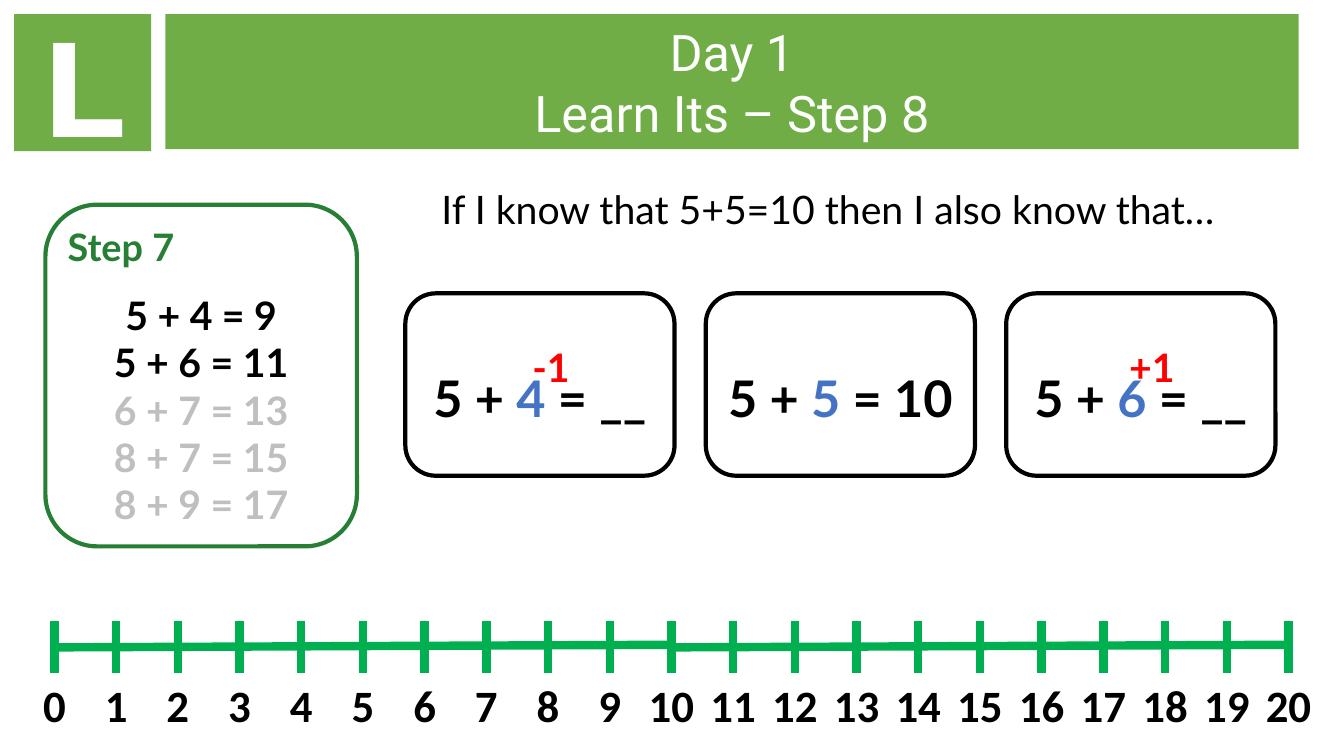
from dataclasses import dataclass

from lxml import etree
from pptx import Presentation
from pptx.dml.color import RGBColor
from pptx.enum.shapes import MSO_CONNECTOR, MSO_SHAPE
from pptx.enum.text import MSO_ANCHOR, PP_ALIGN
from pptx.oxml.ns import qn
from pptx.util import Inches, Pt

RECT, ROUND = MSO_SHAPE.RECTANGLE, MSO_SHAPE.ROUNDED_RECTANGLE
STRAIGHT = MSO_CONNECTOR.STRAIGHT
LEFT, CENTER = PP_ALIGN.LEFT, PP_ALIGN.CENTER
TOP, MIDDLE = MSO_ANCHOR.TOP, MSO_ANCHOR.MIDDLE


@dataclass(frozen=True)
class Theme:
    banner: str = "70AD47"
    step: str = "267F35"
    number_line: str = "00B050"
    white: str = "FFFFFF"
    black: str = "000000"
    faded: str = "BFBFBF"
    changed: str = "4472C4"
    hint: str = "FF0000"
    letter_font: str = "Montserrat"
    title_font: str = "Roboto"
    body_font: str = "Lato"
    label_font: str = "Calibri"
    letter_size: int = 96
    large: int = 36
    label_size: int = 32
    body: int = 28
    step_size: int = 27
    outline: int = 3
    tick: int = 6


T = Theme()


@dataclass(frozen=True)
class Box:
    x: float
    y: float
    w: float
    h: float

    def inner(self, x, y, w, h):
        """Inner box, given as percentages of this one."""
        return Box(self.x + self.w * x / 100, self.y + self.h * y / 100,
                   self.w * w / 100, self.h * h / 100)

    def emu(self):
        return [int(v) for v in (self.x, self.y, self.w, self.h)]


def add_box(s, box, kind, fill, line=None):
    sp = s.shapes.add_shape(kind, *box.emu())
    sp.shadow.inherit = False
    sp.fill.solid()
    sp.fill.fore_color.rgb = RGBColor.from_string(fill)
    if line:
        sp.line.color.rgb = RGBColor.from_string(line)
        sp.line.width = Pt(T.outline)
    else:
        sp.line.fill.background()
    return sp


def add_line(s, x1, y1, x2, y2):
    c = s.shapes.add_connector(STRAIGHT, int(x1), int(y1), int(x2), int(y2))
    c.line.color.rgb = RGBColor.from_string(T.number_line)
    c.line.width = Pt(T.tick)
    etree.SubElement(c.element.spPr, qn("a:effectLst"))


def set_frame(sp, anchor=MIDDLE, side=0.1, top=0.05, bottom=0.05):
    tf = sp.text_frame
    tf.word_wrap = True
    tf.vertical_anchor = anchor
    tf.margin_left = tf.margin_right = Inches(side)
    tf.margin_top, tf.margin_bottom = Inches(top), Inches(bottom)
    return tf


def write(tf, runs, size, font, bold=True, align=CENTER):
    """Add one paragraph of (text, colour) runs."""
    p = tf.paragraphs[0]
    if p.runs:
        p = tf.add_paragraph()
    p.alignment = align
    for text, color in runs:
        r = p.add_run()
        r.text = text
        r.font.size = Pt(size)
        r.font.name = font
        r.font.bold = bold
        r.font.color.rgb = RGBColor.from_string(color)
    return p


def add_text(s, box, text, color, size, font, bold=True, align=CENTER):
    tf = set_frame(s.shapes.add_textbox(*box.emu()), TOP)
    write(tf, [(text, color)], size, font, bold, align)


def letter_tile(s, box):
    tf = set_frame(add_box(s, box, RECT, T.banner), TOP, top=0.07)
    p = write(tf, [("L", T.white)], T.letter_size, T.letter_font)
    p.line_spacing = 0.9


def title_banner(s, box):
    tf = set_frame(add_box(s, box, RECT, T.banner))
    for line in ("Day 1", "Learn Its – Step 8"):
        write(tf, [(line, T.white)], T.large, T.title_font, bold=False)


def step_panel(s, box, heading, known, upcoming):
    tf = set_frame(add_box(s, box, ROUND, T.white, T.step), TOP, 0.07, 0.04, 0.04)
    p = write(tf, [(heading, T.step)], T.step_size, T.body_font, align=LEFT)
    p.space_after = Pt(16)
    for facts, color in ((known, T.black), (upcoming, T.faded)):
        for fact in facts:
            write(tf, [(fact, color)], T.body, T.body_font)


def fact_card(s, box, addend, answer):
    tf = set_frame(add_box(s, box, ROUND, T.white, T.black), MIDDLE, 0.07, 0.29, 0.04)
    runs = [("5 + ", T.black), (addend, T.changed), (f" = {answer}", T.black)]
    write(tf, runs, T.large, T.body_font)


def fact_row(s, box, facts):
    """Cards spread evenly across the box, each with an optional hint."""
    width = 30.94
    pitch = (100 - width) / (len(facts) - 1)
    cards = [box.inner(i * pitch, 0, width, 100) for i in range(len(facts))]
    for card, (addend, answer, hint) in zip(cards, facts):
        fact_card(s, card, addend, answer)
        if hint:
            add_text(s, card.inner(24.72, 24.86, 58.8, 31.49), hint, T.hint,
                     T.body, T.body_font)


def number_line(s, box, last=20):
    """Two gently rising halves that meet at the middle number."""
    half_steps = last // 2
    for x in (0, 50):
        half = box.inner(x, 0, 50, 100)
        overhang = half.w * 0.003
        add_line(s, half.x - overhang, half.y + half.h * 0.51,
                 half.x + half.w + overhang, half.y + half.h * 0.46)
        for i in range(half_steps + 1):
            tick = half.x + half.w * i / half_steps
            add_line(s, tick, half.y, tick, half.y + half.h)
    label_w, label_h = 8.58, 123
    for n in range(last + 1):
        label = box.inner(100 * n / last - label_w / 2, 99, label_w, label_h)
        add_text(s, label, str(n), T.black, T.label_size, T.label_font)


def main():
    prs = Presentation()
    prs.slide_width, prs.slide_height = Inches(13.33), Inches(7.5)
    s = prs.slides.add_slide(prs.slide_layouts[6])
    page = Box(0, 0, prs.slide_width, prs.slide_height)

    letter_tile(s, page.inner(1.05, 1.87, 10.2, 18.13))
    title_banner(s, page.inner(12.3, 1.87, 84.32, 17.87))
    step_panel(s, page.inner(3.38, 27.07, 23.18, 45.2), "Step 7",
               ("5 + 4 = 9", "5 + 6 = 11"),
               ("6 + 7 = 13", "8 + 7 = 15", "8 + 9 = 17"))
    fact_row(s, page.inner(30.16, 38.8, 64.74, 24.13),
             [("4", "__", "-1"), ("5", "10", None), ("6", "__", "+1")])
    number_line(s, page.inner(4.05, 82.1, 91.82, 6.93))
    add_text(s, page.inner(32.11, 23.87, 60.84, 7.6),
             "If I know that 5+5=10 then I also know that…",
             T.black, T.body, T.body_font, bold=False, align=LEFT)
    prs.save("out.pptx")


if __name__ == "__main__":
    main()
